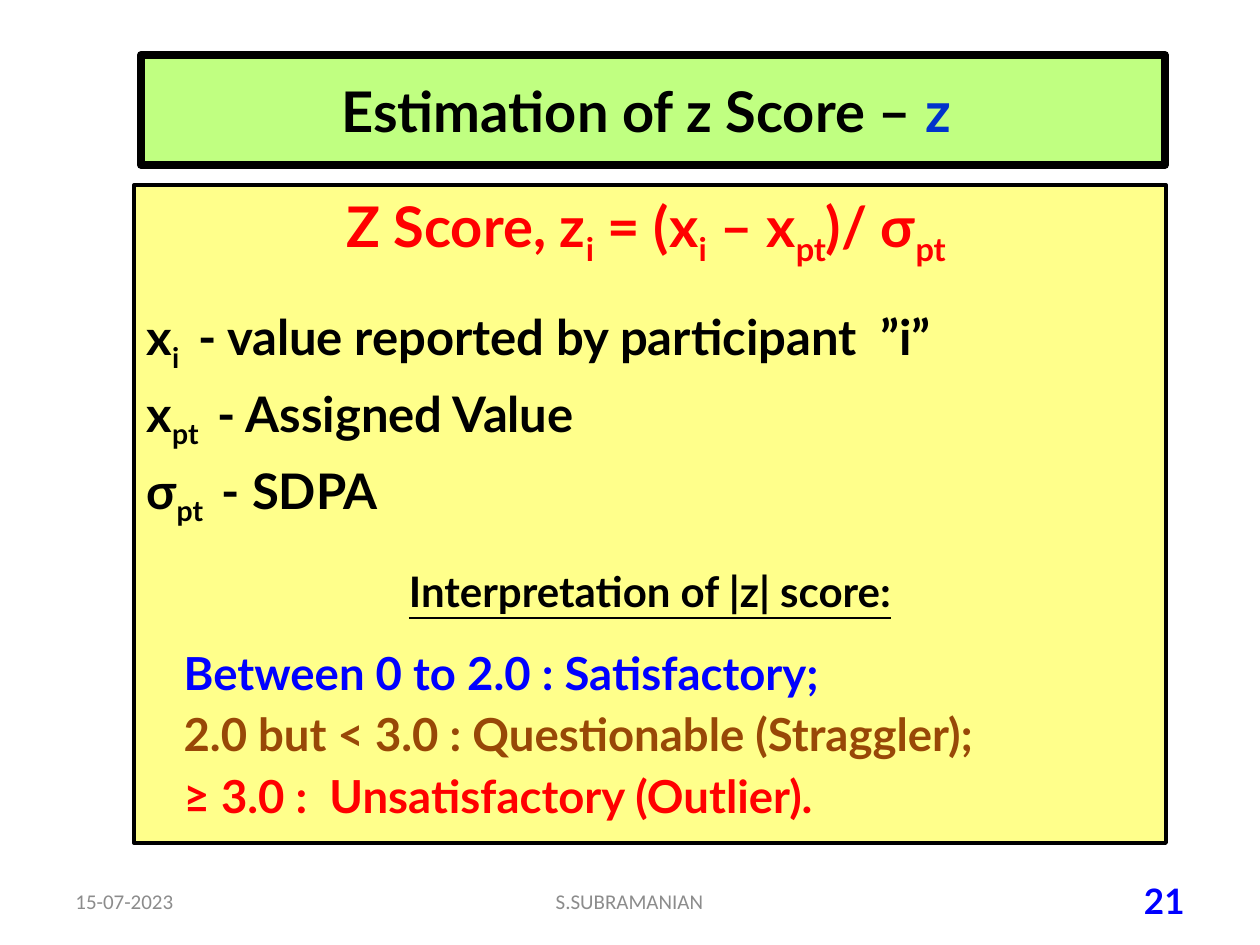
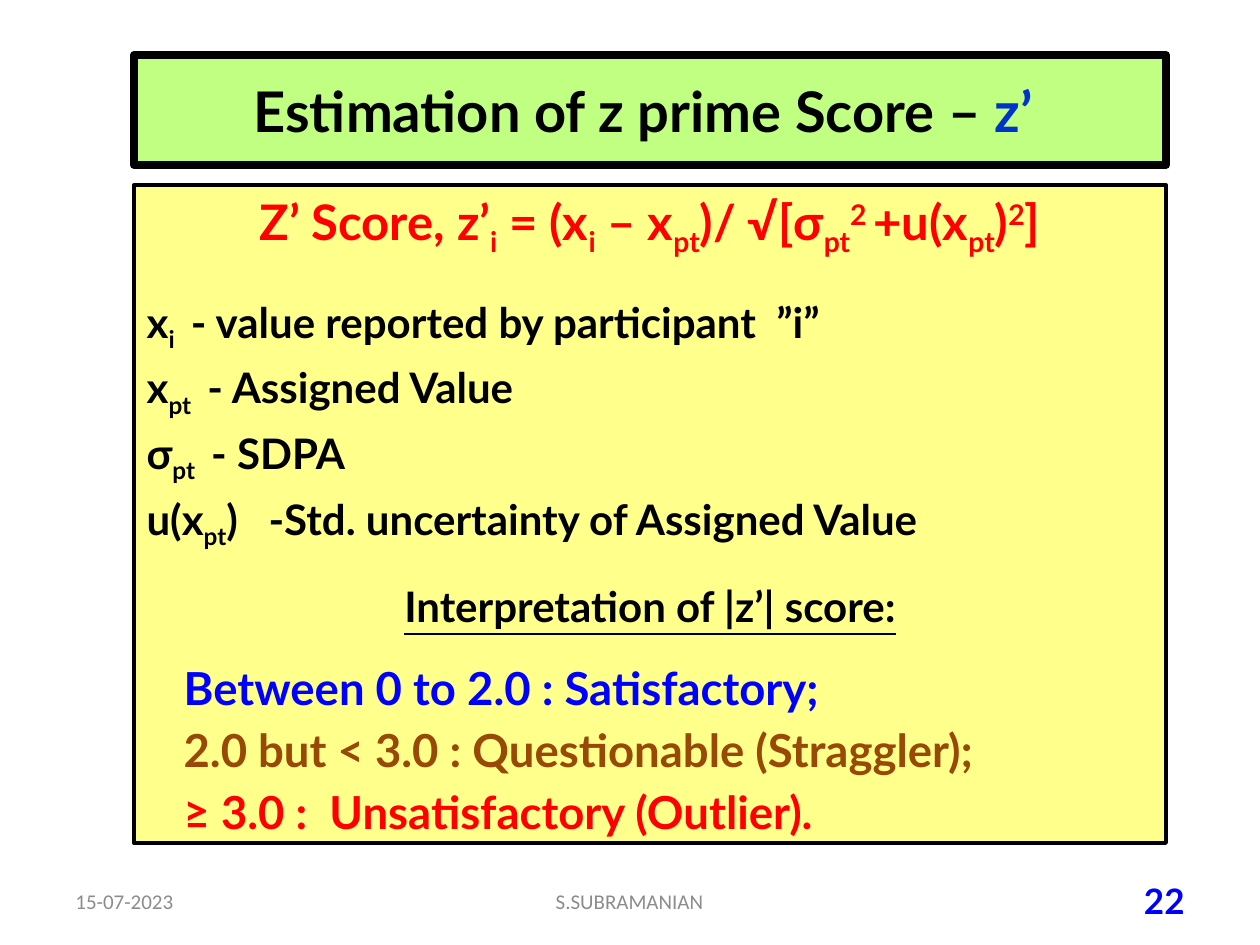
from pptx import Presentation
from pptx.dml.color import RGBColor
from pptx.enum.text import MSO_ANCHOR, MSO_AUTO_SIZE, PP_ALIGN as Align
from pptx.util import Emu, Pt

EMU_PER_PX = 914400 / 126
COLORS = {
    "ink": "000000", "title_fill": "C0FF81", "body_fill": "FFFF8B",
    "symbol": "0033CC", "red": "FF0000", "blue": "0000FF",
    "brown": "984807", "muted": "8C8C8C",
}
HEAD_FONT, FOOT_FONT = "Lato", "Calibri"
SUB, SUPER = -25000, 30000
SUB_I, SUB_PT, SQUARED = ("i", SUB), ("pt", SUB), ("2", SUPER)
BODY_BOX = (134, 185, 1032, 658)
FOOTER_BOX = (63, 876, 1134, 50)
VERDICT_INDENT = 37

VERDICTS = [
    ("Between 0 to 2.0 : Satisfactory;", "blue"),
    ("2.0 but < 3.0 : Questionable (Straggler);", "brown"),
    ("≥ 3.0 :  Unsatisfactory (Outlier).", "red"),
]
DEFINITIONS = [
    ["x", ("i ", SUB), " - value reported by participant  ”i”"],
    ["x", ("pt ", SUB), " - Assigned Value"],
    ["σ", ("pt ", SUB), " - SDPA"],
]
SCORES = [
    {
        "number": "21", "title": "Estimation of z Score – ", "symbol": "z",
        "title_box": (141, 55, 1024, 110), "formula_size": 32, "list_size": 28,
        "formula": ["Z Score, z", SUB_I, " = (x", SUB_I, " – x", SUB_PT,
                    ")/ σ", ("pt ", SUB)],
        "definitions": DEFINITIONS, "heading_gap": 12,
    },
    {
        "number": "22", "title": "Estimation of z prime Score – ", "symbol": "z’",
        "title_box": (134, 55, 1032, 110), "formula_size": 28, "list_size": 24,
        "formula": ["Z’ Score, z’", SUB_I, " = (x", SUB_I, " – x", SUB_PT,
                    ")/ √[σ", SUB_PT, ("2 ", SUPER), "+u(x", SUB_PT, ")",
                    SQUARED, "]"],
        "definitions": DEFINITIONS + [
            ["u(x", SUB_PT, ")   -Std. uncertainty of Assigned Value"]],
        "heading_gap": 9,
    },
]


def px(length):
    """Turn a length in px into EMU."""
    return Emu(round(length * EMU_PER_PX))


def color(name):
    """Look up a named colour."""
    return RGBColor.from_string(COLORS[name])


def place(shape, box):
    """Move and size a shape to a box."""
    shape.left, shape.top, shape.width, shape.height = map(px, box)


def paint(shape, fill, line_width):
    """Give a panel its fill and black outline."""
    shape.fill.solid()
    shape.fill.fore_color.rgb = color(fill)
    shape.line.color.rgb = color("ink")
    shape.line.width = Pt(line_width)


def add_span(para, text, size, shade="ink", font=HEAD_FONT, bold=True,
             shift=0, underline=False):
    """Add one formatted run to a paragraph."""
    span = para.add_run()
    span.text = text
    span.font.name, span.font.size = font, Pt(size)
    span.font.bold, span.font.underline = bold, underline
    span.font.color.rgb = color(shade)
    if shift:
        span.font._element.set("baseline", str(shift))


def add_line(frame, parts, size, shade="ink", align=Align.LEFT, gap=0,
             indent=0, spacing=None, underline=False):
    """Add an unbulleted paragraph, with a gap as tall as a line of that size."""
    first = frame.paragraphs[0]
    para = frame.add_paragraph() if first.runs else first
    props = para._p.get_or_add_pPr()
    props.set("marL", str(px(indent)))
    props.set("indent", "0")
    para.alignment = align
    para.space_before = Pt(round(0.2 * size + 1.4 * gap, 1))
    if spacing:
        para.line_spacing = Pt(spacing)
    props.append(props.makeelement(
        "{http://schemas.openxmlformats.org/drawingml/2006/main}buNone", {}))
    for part in parts:
        text, shift = (part, 0) if isinstance(part, str) else part
        add_span(para, text, size, shade, shift=shift, underline=underline)


def fill_title(shape, score):
    """Fill the green title panel."""
    place(shape, score["title_box"])
    paint(shape, "title_fill", 4.5)
    frame = shape.text_frame
    frame.vertical_anchor = MSO_ANCHOR.MIDDLE
    para = frame.paragraphs[0]
    para.alignment = Align.CENTER
    add_span(para, score["title"], 32)
    add_span(para, score["symbol"] + " ", 32, "symbol")


def fill_body(shape, score):
    """Fill the yellow panel with formula, definitions and verdicts."""
    place(shape, BODY_BOX)
    paint(shape, "body_fill", 2.25)
    frame = shape.text_frame
    frame.auto_size = MSO_AUTO_SIZE.NONE
    add_line(frame, score["formula"], score["formula_size"], "red", Align.CENTER)
    for index, parts in enumerate(score["definitions"]):
        add_line(frame, parts, score["list_size"], gap=0 if index else 12)
    add_line(frame, [f"Interpretation of |{score['symbol']}| score:"], 24,
             align=Align.CENTER, gap=score["heading_gap"], underline=True)
    for index, (verdict, shade) in enumerate(VERDICTS):
        add_line(frame, [verdict], 26, shade, gap=0 if index else 9,
                 indent=VERDICT_INDENT, spacing=30)


def add_footer(page, box, number):
    """Add date, author and page number along the footer box."""
    left, top, width, height = box
    side, middle = 294, 399
    muted = {"size": 12, "shade": "muted", "font": FOOT_FONT, "bold": False}
    cells = [
        (0, side, "15-07-2023", Align.LEFT, muted),
        ((width - middle) // 2, middle, "S.SUBRAMANIAN", Align.CENTER, muted),
        (width - side, side, number, Align.RIGHT, {"size": 20, "shade": "blue"}),
    ]
    for offset, cell_width, text, align, style in cells:
        cell = page.shapes.add_textbox(
            *map(px, (left + offset, top, cell_width, height)))
        frame = cell.text_frame
        frame.word_wrap = True
        frame.vertical_anchor = MSO_ANCHOR.MIDDLE
        para = frame.paragraphs[0]
        para.alignment = align
        add_span(para, text, **style)


def add_score_page(deck, score):
    """Build one score slide."""
    page = deck.slides.add_slide(deck.slide_layouts[1])
    fill_title(page.shapes.title, score)
    fill_body(page.placeholders[1], score)
    add_footer(page, FOOTER_BOX, score["number"])


def main():
    """Build and save the deck."""
    deck = Presentation()
    deck.slide_width, deck.slide_height = px(1260), px(945)
    for score in SCORES:
        add_score_page(deck, score)
    deck.save("out.pptx")


if __name__ == "__main__":
    main()
